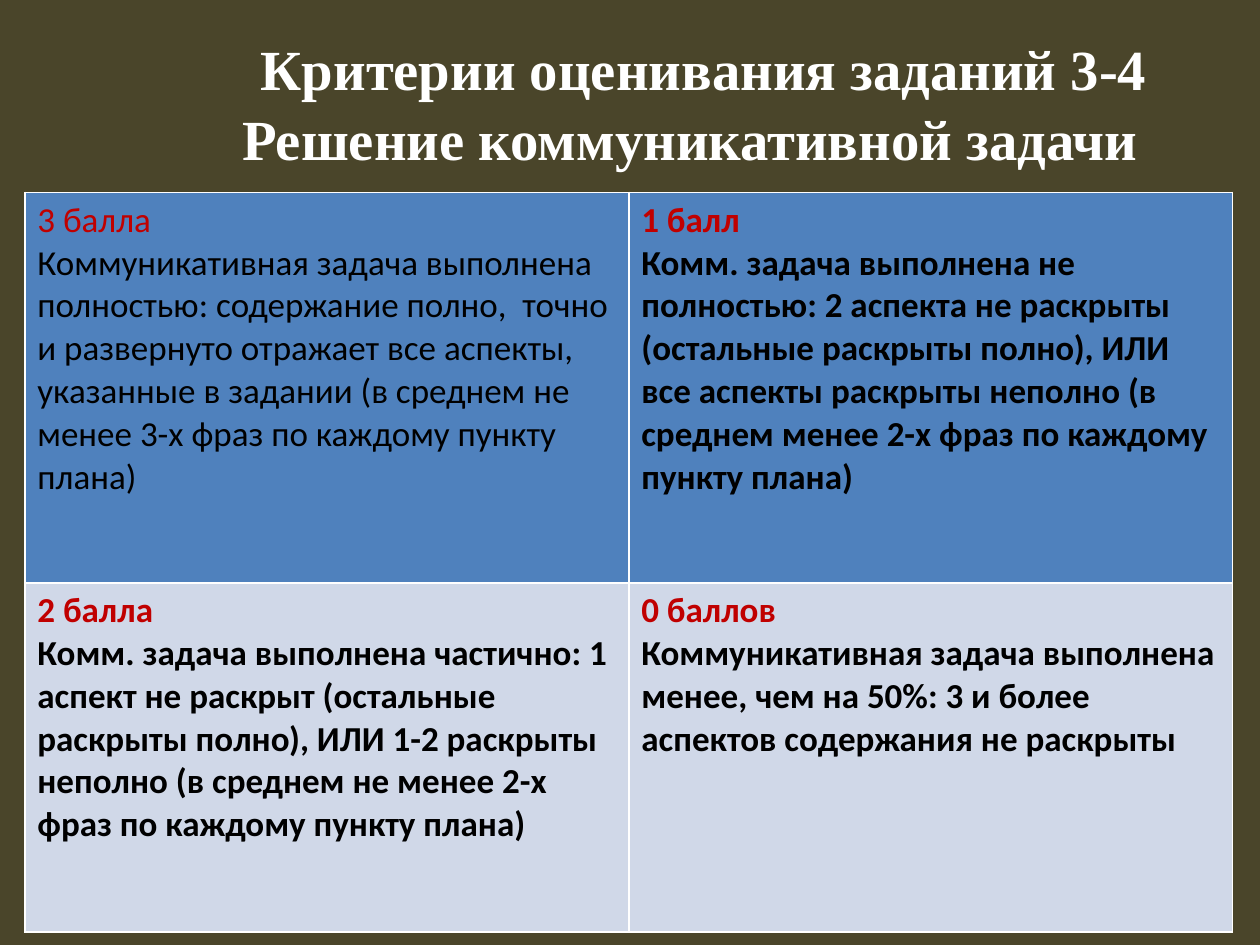
from lxml import etree
from pptx import Presentation
from pptx import util as u
from pptx.dml.color import RGBColor
from pptx.enum import text
from pptx.oxml.ns import qn

BACKGROUND, WHITE, BLACK, RED = "4A452A", "FFFFFF", "000000", "C00000"
ROW_FILLS = ("4F81BD", "D0D8E8")
ROW_HEIGHTS = (7.87, 7.04)
TABLE_LEFT, TABLE_TOP, TABLE_WIDTH = 0.5, 3.88, 24.35

TITLE = (" Критерии оценивания заданий 3-4", "Решение коммуникативной задачи ")

# Score, criterion, bold
CRITERIA = (
    (
        ("3 балла",
         "Коммуникативная задача выполнена полностью: содержание полно,  точно "
         "и развернуто отражает все аспекты, указанные в задании (в среднем не "
         "менее 3-х фраз по каждому пункту плана)", False),
        ("1 балл",
         "Комм. задача выполнена не полностью: 2 аспекта не раскрыты "
         "(остальные раскрыты полно), ИЛИ все аспекты раскрыты неполно (в "
         "среднем менее 2-х фраз по каждому пункту плана)", True),
    ),
    (
        ("2 балла",
         "Комм. задача выполнена частично: 1 аспект не раскрыт (остальные "
         "раскрыты полно), ИЛИ 1-2 раскрыты неполно (в среднем не менее 2-х "
         "фраз по каждому пункту плана)", True),
        ("0 баллов",
         "Коммуникативная задача выполнена менее, чем на 50%: 3 и более "
         "аспектов содержания не раскрыты", True),
    ),
)


def paint(fill, color):
    fill.solid()
    fill.fore_color.rgb = RGBColor.from_string(color)


def write(para, content, name, size, color, bold):
    para.add_run().text = content
    font = para.font
    font.name, font.size, font.bold = name, u.Pt(size), bold
    paint(font.fill, color)


def add_title(page):
    box = page.shapes.add_textbox(u.Cm(2.69), u.Cm(0.65), u.Cm(22.71), u.Cm(2.82))
    frame = box.text_frame
    frame.word_wrap = True
    frame.vertical_anchor = text.MSO_ANCHOR.MIDDLE
    frame.margin_top = frame.margin_bottom = 0
    for index, line in enumerate(TITLE):
        para = frame.add_paragraph() if index else frame.paragraphs[0]
        para.alignment = text.PP_ALIGN.CENTER
        para.line_spacing = u.Pt(40)
        write(para, line, "Times New Roman", 32.4, WHITE, True)


def add_borders(cell, color, width):
    """Draw all four sides; must run before the cell's fill is set."""
    properties = cell._tc.get_or_add_tcPr()
    for side in ("a:lnL", "a:lnR", "a:lnT", "a:lnB"):
        line = etree.SubElement(properties, qn(side), w=str(u.Pt(width)))
        fill = etree.SubElement(line, qn("a:solidFill"))
        etree.SubElement(fill, qn("a:srgbClr"), val=color)


def fill_cell(cell, score, criterion, bold, color):
    add_borders(cell, WHITE, 1)
    paint(cell.fill, color)
    frame = cell.text_frame
    write(frame.paragraphs[0], score, "Calibri", 20, RED, bold)
    write(frame.add_paragraph(), criterion, "Calibri", 20, BLACK, bold)


def add_criteria_table(page):
    table = page.shapes.add_table(
        len(CRITERIA), len(CRITERIA[0]), u.Cm(TABLE_LEFT), u.Cm(TABLE_TOP),
        u.Cm(TABLE_WIDTH), u.Cm(sum(ROW_HEIGHTS))).table
    table.first_row = table.horz_banding = False
    for r, (row, height, color) in enumerate(zip(CRITERIA, ROW_HEIGHTS, ROW_FILLS)):
        table.rows[r].height = u.Cm(height)
        for c, (score, criterion, bold) in enumerate(row):
            fill_cell(table.cell(r, c), score, criterion, bold, color)


def main():
    deck = Presentation()
    deck.slide_width, deck.slide_height = u.Cm(25.4), u.Cm(19.05)
    page = deck.slides.add_slide(deck.slide_layouts[6])
    paint(page.background.fill, BACKGROUND)
    add_title(page)
    add_criteria_table(page)
    deck.save("out.pptx")


if __name__ == "__main__":
    main()
